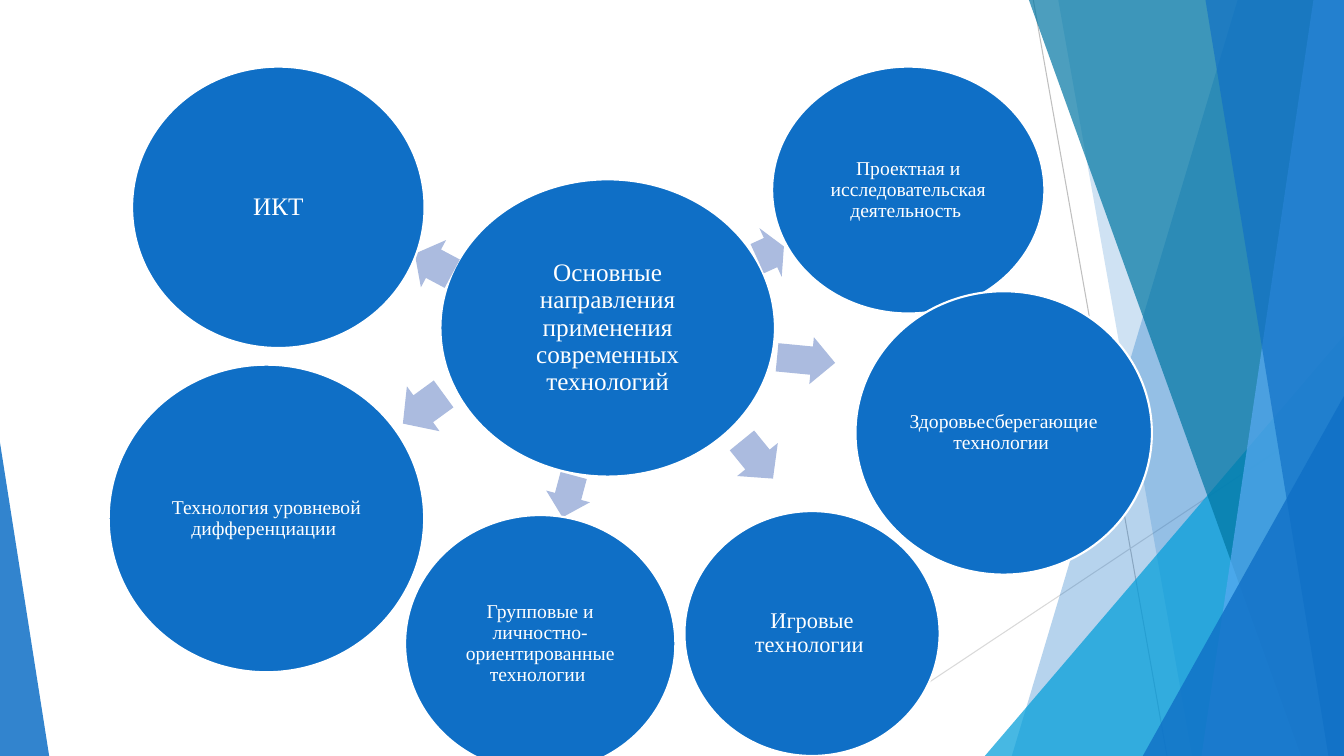
from lxml.etree import SubElement
from pptx import Presentation
from pptx.dml.color import RGBColor
from pptx.enum.shapes import MSO_CONNECTOR, MSO_SHAPE
from pptx.enum.text import MSO_ANCHOR, PP_ALIGN
from pptx.oxml.ns import qn
from pptx.util import Cm, Pt

WIDTH, HEIGHT = 33.87, 19.05

WHITE = RGBColor(0xFF, 0xFF, 0xFF)
BLUE = RGBColor(0x0F, 0x6F, 0xC6)
CYAN = RGBColor(0x00, 0x9D, 0xD9)
TEAL = RGBColor(0x00, 0x76, 0xA3)
SKY = RGBColor(0x59, 0xAA, 0xF2)
LAVENDER = RGBColor(0xAB, 0xBB, 0xDF)
GREY = RGBColor(0xBF, 0xBF, 0xBF)
LIGHT_GREY = RGBColor(0xD9, 0xD9, 0xD9)

# text, size in points, box (left, top, width, height) in cm
CENTRE = ("Основные направления применения современных технологий", 18,
          (11.1, 4.52, 8.43, 7.49))
DIRECTIONS = [
    ("Проектная и исследовательская деятельность ", 14, (19.46, 1.68, 6.86, 6.22)),
    ("Здоровьесберегающие технологии ", 14, (21.56, 7.34, 7.47, 7.14)),
    ("Игровые технологии ", 16, (17.25, 12.88, 6.43, 6.17)),
    ("Групповые и личностно-ориентированные технологии ", 14,
     (10.21, 12.98, 6.81, 6.48)),
    ("Технология уровневой дифференциации ", 14, (2.74, 9.19, 7.95, 7.75)),
    ("ИКТ", 18, (3.33, 1.68, 7.37, 7.09)),
]
# box in cm, clockwise turn in degrees
ARROWS = [
    ((19.05, 5.69, 0.74, 1.35), 335.4),
    ((19.58, 8.48, 1.47, 1.19), 5.5),
    ((18.47, 10.92, 1.24, 1.32), 50.9),
    ((13.77, 11.94, 1.09, 1.14), 105),
    ((10.03, 9.6, 1.27, 1.4), 143.9),
    ((10.39, 5.97, 1.07, 1.35), 208),
]


def paint(shape, color, opacity=100):
    shape.shadow.inherit = False
    shape.line.fill.background()
    shape.fill.solid()
    shape.fill.fore_color.rgb = color
    if opacity < 100:
        srgb = shape.fill._xPr.find(qn("a:solidFill")).find(qn("a:srgbClr"))
        SubElement(srgb, qn("a:alpha"), val=str(opacity * 1000))


def add_preset(slide, kind, box, *adjustments):
    shape = slide.shapes.add_shape(kind, *map(Cm, box))
    for index, value in enumerate(adjustments):
        shape.adjustments[index] = value
    return shape


def add_hairline(slide, start, end, color):
    line = slide.shapes.add_connector(
        MSO_CONNECTOR.STRAIGHT, *map(Cm, start + end))
    line.line.color.rgb = color
    line.line.width = Pt(0.75)
    SubElement(line._element.spPr, qn("a:effectLst"))


def add_panel(slide, top_left, bottom_left, color, opacity):
    """Full-height facet with a slanted left side, reaching the right edge."""
    outline = slide.shapes.build_freeform(Cm(top_left), 0)
    outline.add_line_segments([
        (Cm(WIDTH), 0), (Cm(WIDTH), Cm(HEIGHT)), (Cm(bottom_left), Cm(HEIGHT))])
    paint(outline.convert_to_shape(), color, opacity)


def add_corner(slide, left, top, width, apex, color, opacity):
    """Triangle standing on the bottom edge; apex is 0 (left) to 1 (right)."""
    box = (left, top, width, HEIGHT - top)
    corner = add_preset(slide, MSO_SHAPE.ISOSCELES_TRIANGLE, box, apex)
    paint(corner, color, opacity)


def add_facets(slide):
    add_hairline(slide, (26.04, 0), (29.41, HEIGHT), GREY)
    add_hairline(slide, (WIDTH, 10.24), (20.62, HEIGHT), LIGHT_GREY)
    add_panel(slide, 31.19, 25.5, BLUE, 30)
    add_panel(slide, 26.67, 30.05, BLUE, 20)
    add_corner(slide, 24.82, 8.46, WIDTH - 24.82, 1, CYAN, 72)
    add_panel(slide, 25.93, 32.79, TEAL, 70)
    add_panel(slide, 33.1, 30.28, SKY, 70)
    add_panel(slide, 30.38, 33.48, BLUE, 65)
    add_corner(slide, 28.8, 9.98, WIDTH - 28.8, 1, BLUE, 80)
    add_corner(slide, 0, 11.15, 1.24, 0, BLUE, 85)


def add_circle(slide, text, size, box):
    circle = add_preset(slide, MSO_SHAPE.OVAL, box)
    paint(circle, BLUE)
    circle.line.color.rgb = WHITE
    circle.line.width = Pt(1.5)
    frame = circle.text_frame
    frame.word_wrap = True
    frame.vertical_anchor = MSO_ANCHOR.MIDDLE
    frame.margin_left = frame.margin_right = Cm(0.06)
    frame.margin_top = frame.margin_bottom = Cm(0.06)
    label = frame.paragraphs[0]
    label.alignment = PP_ALIGN.CENTER
    label.line_spacing = 0.9
    run = label.add_run()
    run.text = text
    run.font.name = "Times New Roman"
    run.font.size = Pt(size)
    run.font.color.rgb = WHITE


def add_arrow(slide, box, turn):
    arrow = add_preset(slide, MSO_SHAPE.RIGHT_ARROW, box, 0.6, 0.5)
    arrow.rotation = turn
    paint(arrow, LAVENDER)


def add_directions(slide):
    add_circle(slide, *CENTRE)
    for box, turn in ARROWS:
        add_arrow(slide, box, turn)
    for text, size, box in DIRECTIONS:
        add_circle(slide, text, size, box)


def main():
    deck = Presentation()
    deck.slide_width, deck.slide_height = Cm(WIDTH), Cm(HEIGHT)
    slide = deck.slides.add_slide(deck.slide_layouts[6])
    add_facets(slide)
    add_directions(slide)
    deck.save("out.pptx")


if __name__ == "__main__":
    main()
